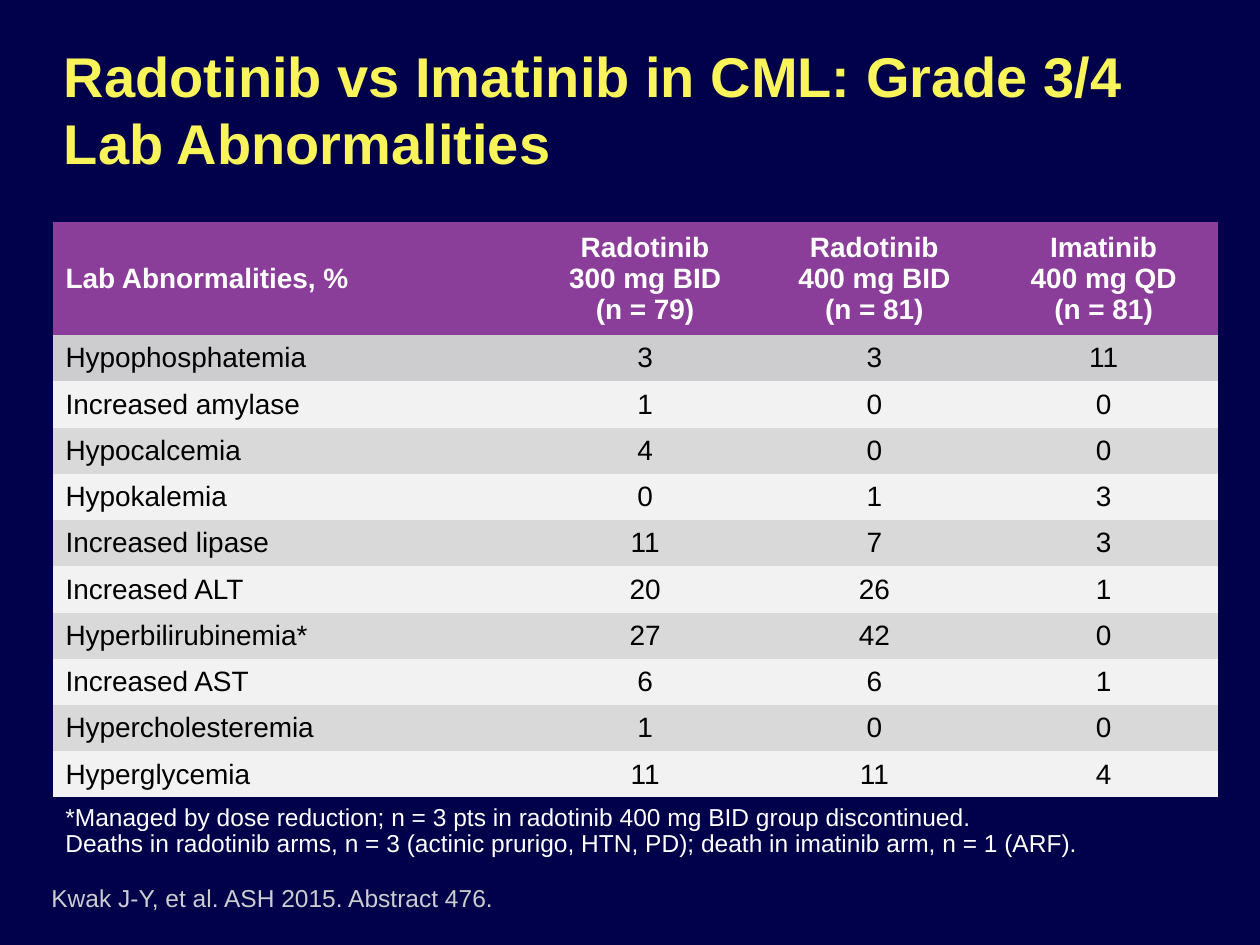
from pptx import Presentation
from pptx.dml.color import RGBColor
from pptx.enum.text import MSO_ANCHOR, PP_ALIGN
from pptx.util import Inches, Pt

LEFT, CENTER = PP_ALIGN.LEFT, PP_ALIGN.CENTER
TOP, MIDDLE, BOTTOM = MSO_ANCHOR.TOP, MSO_ANCHOR.MIDDLE, MSO_ANCHOR.BOTTOM

FONT = "Arial"
NAVY, YELLOW, PURPLE = "00004B", "F8F45A", "8B3D9A"
WHITE, BLACK, SILVER = "FFFFFF", "000000", "CDCDCF"
LIGHT_BAND, DARK_BAND = "F2F2F2", "D9D9D9"

TITLE = "Radotinib vs Imatinib in CML: Grade 3/4 Lab Abnormalities"
HEADER = [
    ["Lab Abnormalities, %"],
    ["Radotinib", "300 mg BID", "(n = 79)"],
    ["Radotinib", "400 mg BID", "(n = 81)"],
    ["Imatinib", "400 mg QD", "(n = 81)"],
]
ABNORMALITIES = [
    ("Hypophosphatemia", 3, 3, 11),
    ("Increased amylase", 1, 0, 0),
    ("Hypocalcemia", 4, 0, 0),
    ("Hypokalemia", 0, 1, 3),
    ("Increased lipase", 11, 7, 3),
    ("Increased ALT", 20, 26, 1),
    ("Hyperbilirubinemia*", 27, 42, 0),
    ("Increased AST", 6, 6, 1),
    ("Hypercholesteremia", 1, 0, 0),
    ("Hyperglycemia", 11, 11, 4),
]
FOOTNOTES = [
    "*Managed by dose reduction; n = 3 pts in radotinib 400 mg BID group discontinued.",
    "Deaths in radotinib arms, n = 3 (actinic prurigo, HTN, PD); death in imatinib arm, n = 1 (ARF).",
]
CITATION = "Kwak J-Y, et al. ASH 2015. Abstract 476."

TABLE_LEFT, TABLE_TOP = 0.42, 1.76
LABEL_WIDTH, ARM_WIDTH = 3.79, 1.82
HEADER_HEIGHT, ROW_HEIGHT = 0.9, 0.367


def rgb(color):
    return RGBColor.from_string(color)


def write(frame, lines, size, color, bold=False, align=LEFT, spacing=None):
    for i, line in enumerate(lines):
        paragraph = frame.paragraphs[0] if i == 0 else frame.add_paragraph()
        paragraph.alignment = align
        if spacing:
            paragraph.line_spacing = spacing
        run = paragraph.add_run()
        run.text = line
        run.font.name = FONT
        run.font.size = Pt(size)
        run.font.bold = bold
        run.font.color.rgb = rgb(color)


def add_text(slide, box, lines, size, color, anchor=TOP, **style):
    frame = slide.shapes.add_textbox(*map(Inches, box)).text_frame
    frame.word_wrap = True
    frame.vertical_anchor = anchor
    write(frame, lines, size, color, **style)


def fill_row(table, row, cells, fill, color, bold=False):
    for column, lines in enumerate(cells):
        cell = table.cell(row, column)
        cell.fill.solid()
        cell.fill.fore_color.rgb = rgb(fill)
        cell.vertical_anchor = MIDDLE
        write(cell.text_frame, lines, 16, color, bold,
              CENTER if column else LEFT)


def add_lab_table(slide):
    widths = [LABEL_WIDTH] + [ARM_WIDTH] * (len(HEADER) - 1)
    heights = [HEADER_HEIGHT] + [ROW_HEIGHT] * len(ABNORMALITIES)
    table = slide.shapes.add_table(
        len(heights), len(widths), Inches(TABLE_LEFT), Inches(TABLE_TOP),
        Inches(sum(widths)), Inches(sum(heights))).table
    for column, width in zip(table.columns, widths):
        column.width = Inches(width)
    for row, height in zip(table.rows, heights):
        row.height = Inches(height)

    # Borderless cells: only the fills set the bands apart
    style_id = table._tbl.tblPr.find("{*}tableStyleId")
    style_id.text = "{2D5ABB26-0587-4C30-8999-92F81FD0307C}"

    fill_row(table, 0, HEADER, PURPLE, WHITE, bold=True)
    for i, values in enumerate(ABNORMALITIES, start=1):
        band = SILVER if i == 1 else DARK_BAND if i % 2 else LIGHT_BAND
        fill_row(table, i, [[str(value)] for value in values], band, BLACK)


def main():
    prs = Presentation()
    prs.slide_width, prs.slide_height = Inches(10), Inches(7.5)
    slide = prs.slides.add_slide(prs.slide_layouts[6])
    slide.background.fill.solid()
    slide.background.fill.fore_color.rgb = rgb(NAVY)

    add_text(slide, (0.41, 0.26, 9.23, 1.21), [TITLE], 32, YELLOW, MIDDLE,
             bold=True)
    add_lab_table(slide)
    add_text(slide, (0.31, 6.95, 9.36, 0.34), [CITATION], 14, SILVER, BOTTOM)
    add_text(slide, (0.42, 6.34, 8.91, 0.82), FOOTNOTES, 14, WHITE,
             spacing=0.9)
    prs.save("out.pptx")


if __name__ == "__main__":
    main()
